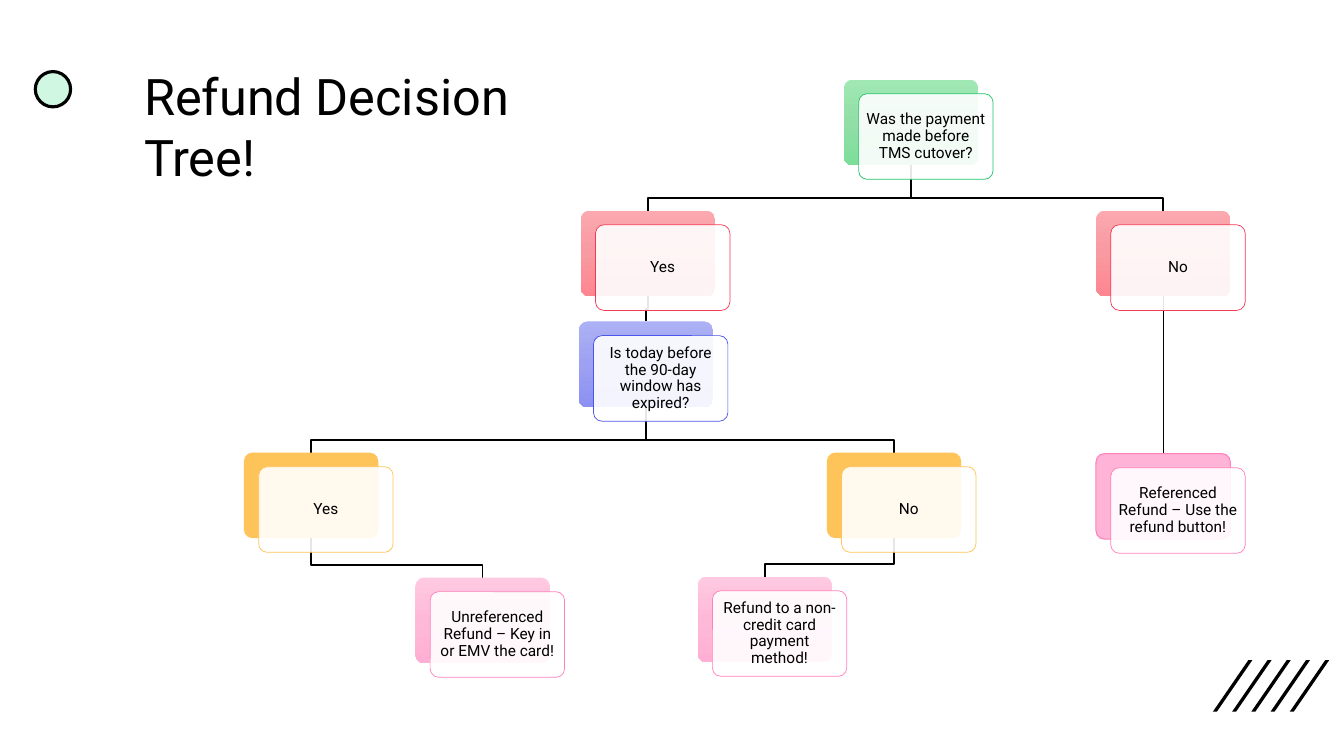
from copy import deepcopy

from lxml.etree import SubElement
from pptx import Presentation
from pptx.dml.color import RGBColor
from pptx.enum.shapes import MSO_CONNECTOR, MSO_SHAPE
from pptx.enum.text import MSO_ANCHOR, PP_ALIGN
from pptx.oxml.ns import qn
from pptx.util import Inches, Pt

WIDTH, HEIGHT = Inches(13.33), Inches(7.5)
COLUMNS = ROWS = 100
CARD_WIDTH, CARD_HEIGHT = 10, 11.33
FRONT_RIGHT, FRONT_DOWN = 1.1, 1.87
BEND_ABOVE_CHILD = 1.67

COLORS = {
    "ink": "000000", "paper": "FFFFFF", "mint": "CFF7E1",
    "green": "21C46B", "red": "F43B56", "blue": "4B56E8",
    "amber": "FFC459", "pink": "FF80BD", "rose": "FFB3D7",
}
GRADIENTS = {
    "green": ("9FE8B3", "92DEA7", "7DDE9A"),
    "red": ("FBA8AF", "F999A1", "FD8590"),
    "blue": ("ACB0F4", "9EA1F1", "8B90F3"),
    "pink": ("FFC9E1", "FFB9D8", "FFAFD3"),
}
NODES = {
    "cutover": (62.79, 10.53, "green", "Was the payment made before TMS cutover?"),
    "before": (43.21, 27.87, "red", "Yes"),
    "window": (43.06, 42.53, "blue", "Is today before the 90-day window has expired?"),
    "open": (18.15, 59.87, "amber", "Yes"),
    "unreferenced": (30.91, 76.4, "pink", "Unreferenced Refund – Key in or EMV the card!"),
    "expired": (61.52, 59.87, "amber", "No"),
    "other method": (51.91, 76.27, "pink", "Refund to a non-credit card payment method!"),
    "after": (81.55, 27.87, "red", "No"),
    "referenced": (81.55, 60, "rose", "Referenced Refund – Use the refund button!"),
}
BENT_LINKS = [
    ("cutover", "after"), ("expired", "other method"), ("window", "expired"),
    ("open", "unreferenced"), ("window", "open"), ("before", "window"),
    ("cutover", "before"),
]


def across(columns):
    return round(WIDTH * columns / COLUMNS)


def down(rows):
    return round(HEIGHT * rows / ROWS)


def color(name):
    return RGBColor.from_string(COLORS[name])


def set_line(shape, name, points):
    shape.line.color.rgb = color(name)
    shape.line.width = Pt(points)


def set_gradient(shape, stops):
    shape.fill.gradient()
    shape.fill.gradient_angle = 270
    stop_list = shape.element.find(".//" + qn("a:gsLst"))
    stop_list.insert(1, deepcopy(stop_list[0]))
    for index, stop in enumerate(shape.fill.gradient_stops):
        stop.position = index / 2
        stop.color.rgb = RGBColor.from_string(stops[index])


def add_plain(page, kind, left, top, width, height):
    shape = page.shapes.add_shape(
        kind, across(left), down(top), across(width), down(height))
    shape.shadow.inherit = False
    return shape


def add_outline(page, points, close):
    places = [(across(x), down(y)) for x, y in points]
    builder = page.shapes.build_freeform(*places[0])
    builder.add_line_segments(places[1:], close=close)
    outline = builder.convert_to_shape()
    outline.shadow.inherit = False
    return outline


def write(box, text, size, align=PP_ALIGN.LEFT, anchor=MSO_ANCHOR.TOP,
          spacing=None, inset=None):
    frame = box.text_frame
    frame.word_wrap = True
    frame.vertical_anchor = anchor
    if inset is not None:
        frame.margin_left = frame.margin_right = Inches(inset)
        frame.margin_top = frame.margin_bottom = Inches(inset)
    para = frame.paragraphs[0]
    para.alignment = align
    para.line_spacing = spacing
    span = para.add_run()
    span.text = text
    span.font.name = "Roboto"
    span.font.size = Pt(size)
    span.font.color.rgb = color("ink")


def add_card(page, left, top):
    card = add_plain(page, MSO_SHAPE.ROUNDED_RECTANGLE,
                     left, top, CARD_WIDTH, CARD_HEIGHT)
    card.adjustments[0] = 0.1
    return card


def add_node(page, left, top, tone, text):
    back = add_card(page, left, top)
    back.line.fill.background()
    if tone in GRADIENTS:
        set_gradient(back, GRADIENTS[tone])
    else:
        back.fill.solid()
        back.fill.fore_color.rgb = color(tone)
    edge = tone
    if tone == "rose":
        edge = "pink"
        set_line(back, edge, 0.75)

    front = add_card(page, left + FRONT_RIGHT, top + FRONT_DOWN)
    front.fill.solid()
    front.fill.fore_color.rgb = color("paper")
    tint = front.element.spPr.find(qn("a:solidFill")).find(qn("a:srgbClr"))
    SubElement(tint, qn("a:alpha")).set("val", "90000")
    set_line(front, edge, 0.5)
    write(front, text, 11, align=PP_ALIGN.CENTER, anchor=MSO_ANCHOR.MIDDLE,
          spacing=0.9, inset=0.05)


def link_ends(parent, child):
    start_left, start_top = NODES[parent][:2]
    end_left, end_top = NODES[child][:2]
    middle = CARD_WIDTH / 2
    return (start_left + middle, start_top + CARD_HEIGHT), (end_left + middle, end_top)


def add_bent_link(page, parent, child):
    start, end = link_ends(parent, child)
    bend = end[1] - BEND_ABOVE_CHILD
    link = add_outline(page, [start, (start[0], bend), (end[0], bend), end], False)
    link.fill.background()
    set_line(link, "ink", 1)


def add_straight_link(page, parent, child):
    start, end = link_ends(parent, child)
    link = page.shapes.add_connector(
        MSO_CONNECTOR.STRAIGHT, across(start[0]), down(start[1]),
        across(end[0]), down(end[1]))
    set_line(link, "ink", 0.5)
    SubElement(link.element.spPr, qn("a:effectLst"))


def add_slash(page, left, top=87.33, bottom=94.13, lean=2.63, thickness=0.3):
    slash = add_outline(page, [
        (left + thickness, bottom), (left, bottom),
        (left + lean, top), (left + lean + thickness, top)], True)
    slash.fill.solid()
    slash.fill.fore_color.rgb = color("ink")
    slash.line.fill.background()


def add_dot(page):
    dot = add_plain(page, MSO_SHAPE.OVAL, 2.63, 9.47, 2.63, 4.67)
    dot.fill.solid()
    dot.fill.fore_color.rgb = color("mint")
    set_line(dot, "ink", 2.25)


def add_title(page, text):
    box = page.shapes.add_textbox(across(9.98), down(8), across(36.31), down(17.4))
    write(box, text, 36)


def main():
    deck = Presentation()
    deck.slide_width, deck.slide_height = WIDTH, HEIGHT
    page = deck.slides.add_slide(deck.slide_layouts[6])
    for index in range(5):
        add_slash(page, 90.25 + 1.43 * index)
    add_dot(page)
    add_straight_link(page, "after", "referenced")
    for parent, child in BENT_LINKS:
        add_bent_link(page, parent, child)
    for node in NODES.values():
        add_node(page, *node)
    add_title(page, "Refund Decision Tree!")
    deck.save("out.pptx")


if __name__ == "__main__":
    main()
